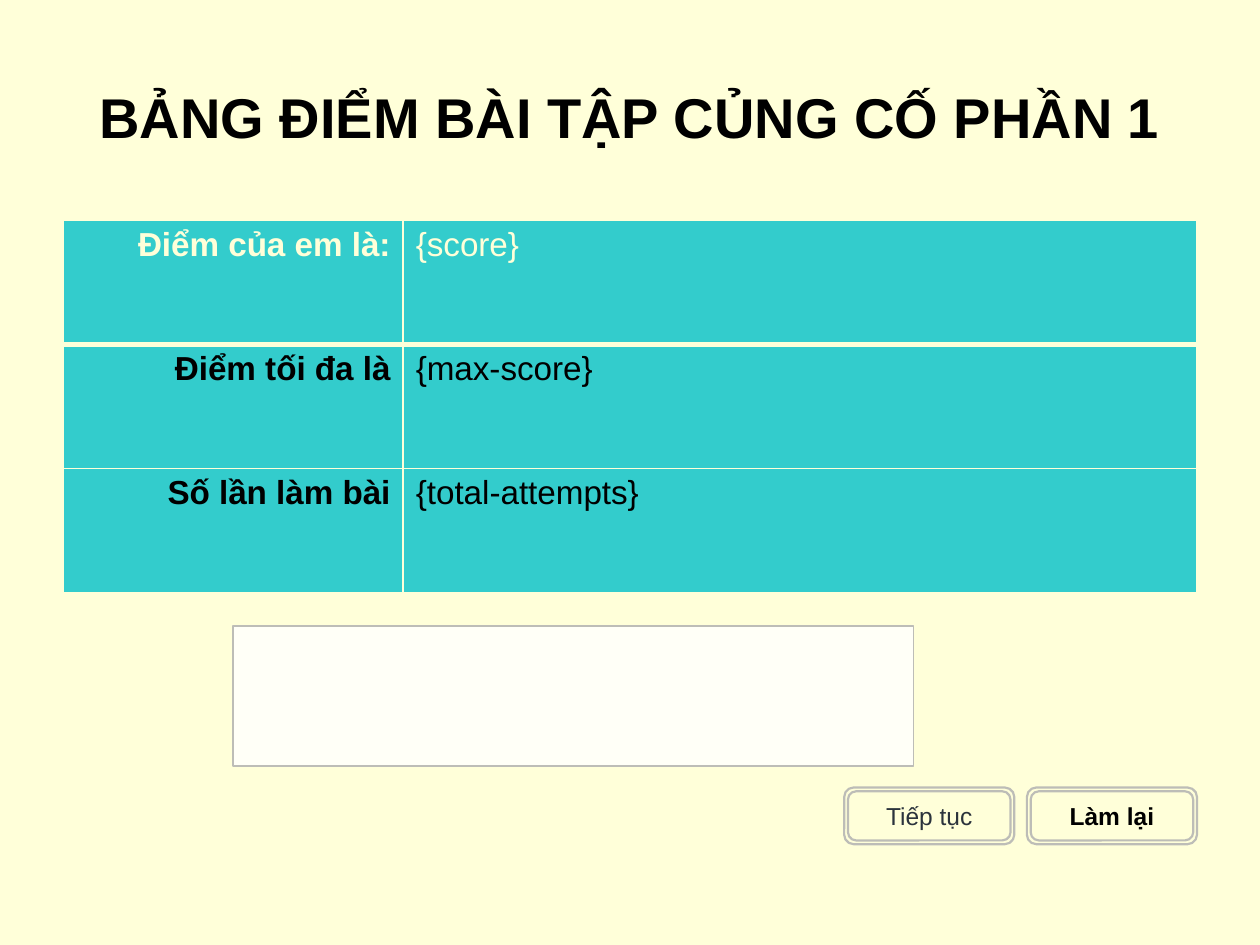
from dataclasses import dataclass
from typing import Optional

from lxml.etree import SubElement
from pptx import Presentation
from pptx.dml.color import RGBColor
from pptx.enum.shapes import MSO_SHAPE
from pptx.enum.text import MSO_ANCHOR, PP_ALIGN
from pptx.oxml.ns import qn
from pptx.util import Inches, Pt

CREAM = RGBColor(0xFF, 0xFF, 0xD9)
TEAL = RGBColor(0x33, 0xCC, 0xCC)
PALE = RGBColor(0xFF, 0xFF, 0xF7)
GRAY = RGBColor(0xBD, 0xBD, 0xB7)
SLATE = RGBColor(0x2B, 0x33, 0x3C)
BLACK = RGBColor(0x00, 0x00, 0x00)

WIDTH, HEIGHT = Inches(10), Inches(7.5)
UNIT = WIDTH / 200
FONT = "Arial"


@dataclass
class Box:
    col: float
    row: float
    wide: float
    high: float

    def inset(self, gap: float) -> "Box":
        return Box(self.col + gap, self.row + gap, self.wide - 2 * gap, self.high - 2 * gap)

    def place(self) -> list[int]:
        return [round(n * UNIT) for n in (self.col, self.row, self.wide, self.high)]


@dataclass
class Style:
    size: float
    color: RGBColor
    bold: bool = False
    align: PP_ALIGN = PP_ALIGN.CENTER


@dataclass
class Entry:
    label: str
    value: str
    color: RGBColor
    top: float
    bottom: float


@dataclass
class Button:
    col: float
    label: str
    style: Style


ENTRIES = [
    Entry("Điểm của em là:", "{score}", CREAM, 1, 3),
    Entry("Điểm tối đa là", "{max-score}", BLACK, 3, 1),
    Entry("Số lần làm bài", "{total-attempts}", BLACK, 1, 1),
]
BUTTONS = [
    Button(163, "Làm lại", Style(14, BLACK, True)),
    Button(134, "Tiếp tục", Style(14, SLATE)),
]


def write(frame, text: str, style: Style) -> None:
    frame.text = text
    line = frame.paragraphs[0]
    line.alignment = style.align
    font = line.runs[0].font
    font.name, font.size, font.bold = FONT, Pt(style.size), style.bold
    font.color.rgb = style.color


def center(frame) -> None:
    frame.word_wrap = True
    frame.vertical_anchor = MSO_ANCHOR.MIDDLE
    frame.margin_left = frame.margin_right = 0
    frame.margin_top = frame.margin_bottom = 0


def panel(shapes, kind: MSO_SHAPE, box: Box, width: float, fill: Optional[RGBColor] = None):
    shape = shapes.add_shape(kind, *box.place())
    shape.shadow.inherit = False
    shape.line.color.rgb = GRAY
    shape.line.width = Pt(width)
    if fill is None:
        shape.fill.background()
    else:
        shape.fill.solid()
        shape.fill.fore_color.rgb = fill
    return shape


def border(cell, top: float, bottom: float) -> None:
    props = cell._tc.get_or_add_tcPr()
    for side, width in (("L", 1), ("R", 1), ("T", top), ("B", bottom)):
        line = SubElement(props, qn(f"a:ln{side}"), w=str(Pt(width)))
        SubElement(SubElement(line, qn("a:solidFill")), qn("a:srgbClr"), val=str(CREAM))


def scores(shapes, box: Box) -> None:
    table = shapes.add_table(len(ENTRIES), 2, *box.place()).table
    for column, share in zip(table.columns, (0.3, 0.7)):
        column.width = round(box.wide * share * UNIT)
    for row, entry in enumerate(ENTRIES):
        pair = (
            (entry.label, Style(19, entry.color, True, PP_ALIGN.RIGHT)),
            (entry.value, Style(19, entry.color, False, PP_ALIGN.LEFT)),
        )
        for col, (text, style) in enumerate(pair):
            cell = table.cell(row, col)
            write(cell.text_frame, text, style)
            border(cell, entry.top, entry.bottom)
            cell.fill.solid()
            cell.fill.fore_color.rgb = TEAL


def button(shapes, item: Button) -> None:
    group = shapes.add_group_shape().shapes
    outer = Box(item.col, 125, 27, 9)
    panel(group, MSO_SHAPE.ROUNDED_RECTANGLE, outer, 1.25)
    inner = panel(group, MSO_SHAPE.ROUNDED_RECTANGLE, outer.inset(0.6), 1.25)
    center(inner.text_frame)
    write(inner.text_frame, item.label, item.style)


def main() -> None:
    deck = Presentation()
    deck.slide_width, deck.slide_height = WIDTH, HEIGHT
    slide = deck.slides.add_slide(deck.slide_layouts[6])
    slide.background.fill.solid()
    slide.background.fill.fore_color.rgb = CREAM
    shapes = slide.shapes

    title = shapes.add_textbox(*Box(10, 6, 180, 25).place()).text_frame
    center(title)
    write(title, "BẢNG ĐIỂM BÀI TẬP CỦNG CỐ PHẦN 1", Style(32, BLACK, True))

    scores(shapes, Box(10, 35, 180, 59.1))
    panel(shapes, MSO_SHAPE.RECTANGLE, Box(37, 99.4, 108, 22.2), 1, PALE)

    for item in BUTTONS:
        button(shapes, item)
    deck.save("out.pptx")


if __name__ == "__main__":
    main()
